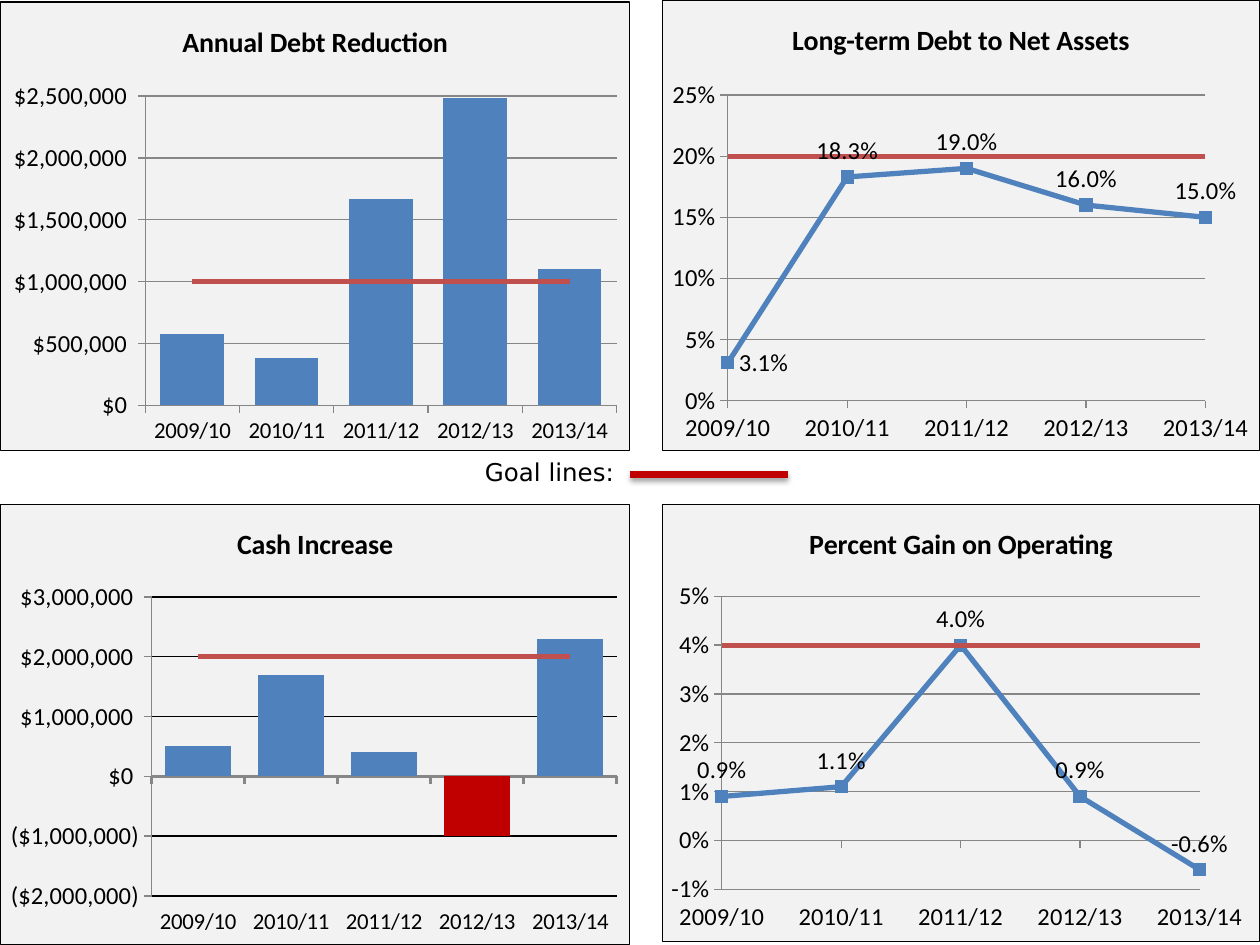
from lxml import etree
from pptx import Presentation
from pptx.chart.data import CategoryChartData
from pptx.dml.color import RGBColor
from pptx.enum.chart import (XL_CHART_TYPE, XL_LABEL_POSITION, XL_MARKER_STYLE,
                             XL_TICK_LABEL_POSITION, XL_TICK_MARK)
from pptx.enum.shapes import MSO_CONNECTOR
from pptx.oxml import parse_xml
from pptx.oxml.ns import nsdecls, qn
from pptx.util import Inches, Pt

BAR, LINE = XL_CHART_TYPE.COLUMN_CLUSTERED, XL_CHART_TYPE.LINE_MARKERS
ABOVE, RIGHT = XL_LABEL_POSITION.ABOVE, XL_LABEL_POSITION.RIGHT
SQUARE, BARE = XL_MARKER_STYLE.SQUARE, XL_MARKER_STYLE.NONE
LOW = XL_TICK_LABEL_POSITION.LOW
OUT, NONE = XL_TICK_MARK.OUTSIDE, XL_TICK_MARK.NONE
BLUE, BRICK, RED = "4F81BD", "C0504D", "C00000"
BLACK, GREY = "000000", "868686"
MONEY = '"$"#,##0_);\\("$"#,##0\\)'
YEARS = ["2009/10", "2010/11", "2011/12", "2012/13", "2013/14"]


def color(code):
    return RGBColor.from_string(code)


def write(frame, text, size=14, face="Calibri", bold=False, ink=BLACK):
    run = frame.paragraphs[0].add_run()
    run.text = text
    run.font.size, run.font.name, run.font.bold = Pt(size), face, bold
    run.font.color.rgb = color(ink)


prs = Presentation()
prs.slide_width, prs.slide_height = Inches(10), Inches(7.5)
slide = prs.slides.add_slide(prs.slide_layouts[6])

# Goal line key
box = slide.shapes.add_textbox(Inches(3.75), Inches(3.58), Inches(2.58), Inches(0.34))
box.text_frame.word_wrap = True
write(box.text_frame, "Goal lines:", face="DejaVu Sans")
key = slide.shapes.add_connector(MSO_CONNECTOR.STRAIGHT, Inches(5), Inches(3.77),
                                 Inches(6.25), Inches(3.77))
key.line.color.rgb, key.line.width = color(RED), Pt(4)
key._element.spPr.append(parse_xml(
    f'<a:effectLst {nsdecls("a")}><a:outerShdw blurRad="40000" dist="20000" '
    'dir="5400000" rotWithShape="0"><a:srgbClr val="000000"><a:alpha val="38000"/>'
    '</a:srgbClr></a:outerShdw></a:effectLst>'))

# Title, kind, place, plot area as shares of the chart, values, goal, axis low, high, step
charts = [
    ("Long-term Debt to Net Assets", LINE, (5.25, 0, 4.75, 3.58), (0.11, 0.21, 0.8, 0.68),
     [0.031, 0.183, 0.19, 0.16, 0.15], 0.2, (0, 0.25, 0.05)),
    ("Annual Debt Reduction", BAR, (0, 0.01, 5, 3.57), (0.23, 0.21, 0.75, 0.69),
     [580000, 380000, 1670000, 2480000, 1100000], 1000000, (0, 2500000, 500000)),
    ("Cash Increase", BAR, (0, 4, 5, 3.5), (0.24, 0.21, 0.74, 0.68),
     [500000, 1700000, 400000, -1000000, 2300000], 2000000, (-2000000, 3000000, 1000000)),
    ("Percent Gain on Operating", LINE, (5.25, 4, 4.75, 3.48), (0.1, 0.21, 0.8, 0.67),
     [0.009, 0.011, 0.04, 0.009, -0.006], 0.04, (-0.01, 0.05, 0.01)),
]

for title, kind, place, inner, vals, goal, scale in charts:
    bars = kind == BAR
    cash = title == "Cash Increase"
    data = CategoryChartData(number_format=MONEY if bars else "0.0%")
    data.categories = YEARS
    data.add_series(title if cash else "Series 1", vals)
    data.add_series("Series 2", [goal] * len(YEARS))
    chart = slide.shapes.add_chart(kind, *map(Inches, place), data).chart
    chart.has_legend = False
    chart.font.size, chart.font.name = Pt(14), "Calibri"
    chart.font.color.rgb = color(BLACK)
    chart.has_title = True
    write(chart.chart_title.text_frame, title, size=16, bold=True)
    chart.chart_title.include_in_layout = False
    plot = chart.plots[0]
    plot.vary_by_categories = False
    area = chart._chartSpace.chart.plotArea

    # Goal series of a column chart moves to a line plot on the same axes
    if bars:
        plot.gap_width = 40 if cash else 48
        old = area.find(qn("c:barChart"))
        new = parse_xml(f'<c:lineChart {nsdecls("c")}><c:grouping val="standard"/>'
                        '<c:varyColors val="0"/><c:marker val="1"/></c:lineChart>')
        ser = old.findall(qn("c:ser"))[1]
        for flag in ser.findall(qn("c:invertIfNegative")):
            ser.remove(flag)
        new.insert(2, ser)
        for ref in old.findall(qn("c:axId")):
            etree.SubElement(new, qn("c:axId")).set("val", ref.get("val"))
        old.addnext(new)

    # Series
    main, mark = list(chart.series)
    mark.format.line.color.rgb, mark.format.line.width = color(BRICK), Pt(3)
    mark.marker.style, mark.smooth = BARE, False
    if bars:
        main.invert_if_negative = False
        main.format.fill.solid()
        main.format.fill.fore_color.rgb = color(BLUE)
        if cash:
            loss = main.points[3].format.fill
            loss.solid()
            loss.fore_color.rgb = color(RED)
    else:
        main.format.line.color.rgb, main.format.line.width = color(BLUE), Pt(3)
        main.smooth = False
        main.marker.style, main.marker.size = SQUARE, 7
        main.marker.format.fill.solid()
        main.marker.format.fill.fore_color.rgb = color(BLUE)
        main.marker.format.line.color.rgb = color(BLUE)
        tags = main.data_labels
        tags.show_value, tags.position = True, ABOVE
        tags.number_format, tags.number_format_is_linked = "0.0%", False
        if goal == 0.2:
            main.points[0].data_label.position = RIGHT

    # Axes
    cat, val = chart.category_axis, chart.value_axis
    for axis in (cat, val):
        axis.major_tick_mark, axis.minor_tick_mark = OUT, NONE
        axis.format.line.color.rgb, axis.format.line.width = color(GREY), Pt(0.75)
    if cash:
        cat.format.line.width = Pt(2)
    if scale[0] < 0:
        cat.tick_label_position = LOW
    cat.tick_labels.font.size = Pt(13 if bars else 14)
    val.minimum_scale, val.maximum_scale, val.major_unit = scale
    val.tick_labels.number_format = MONEY if bars else "0%"
    val.tick_labels.number_format_is_linked = False
    val.has_major_gridlines = True
    grid = val.major_gridlines.format.line
    grid.color.rgb, grid.width = color(BLACK if cash else GREY), Pt(0.75)
    node = area.find(qn("c:valAx"))
    cross = node.find(qn("c:crossBetween"))
    if cross is None:
        cross = etree.Element(qn("c:crossBetween"))
        node.find(qn("c:crosses")).addnext(cross)
    cross.set("val", "between" if bars else "midCat")

    # Plot place, background and border
    for spare in area.findall(qn("c:layout")):
        area.remove(spare)
    sizes = "".join(f'<c:{tag} val="{part}"/>' for tag, part in zip("xywh", inner))
    area.insert(0, parse_xml(
        f'<c:layout {nsdecls("c")}><c:manualLayout><c:layoutTarget val="inner"/>'
        f'<c:xMode val="edge"/><c:yMode val="edge"/>{sizes}</c:manualLayout></c:layout>'))
    skin = (f'<c:spPr {nsdecls("c", "a")}><a:solidFill><a:srgbClr val="F2F2F2"/>'
            '</a:solidFill>%s</c:spPr>')
    area.append(parse_xml(skin % "<a:ln><a:noFill/></a:ln>"))
    chart._chartSpace.chart.addnext(parse_xml(
        skin % '<a:ln w="9525"><a:solidFill><a:srgbClr val="000000"/></a:solidFill></a:ln>'))

prs.save("out.pptx")
